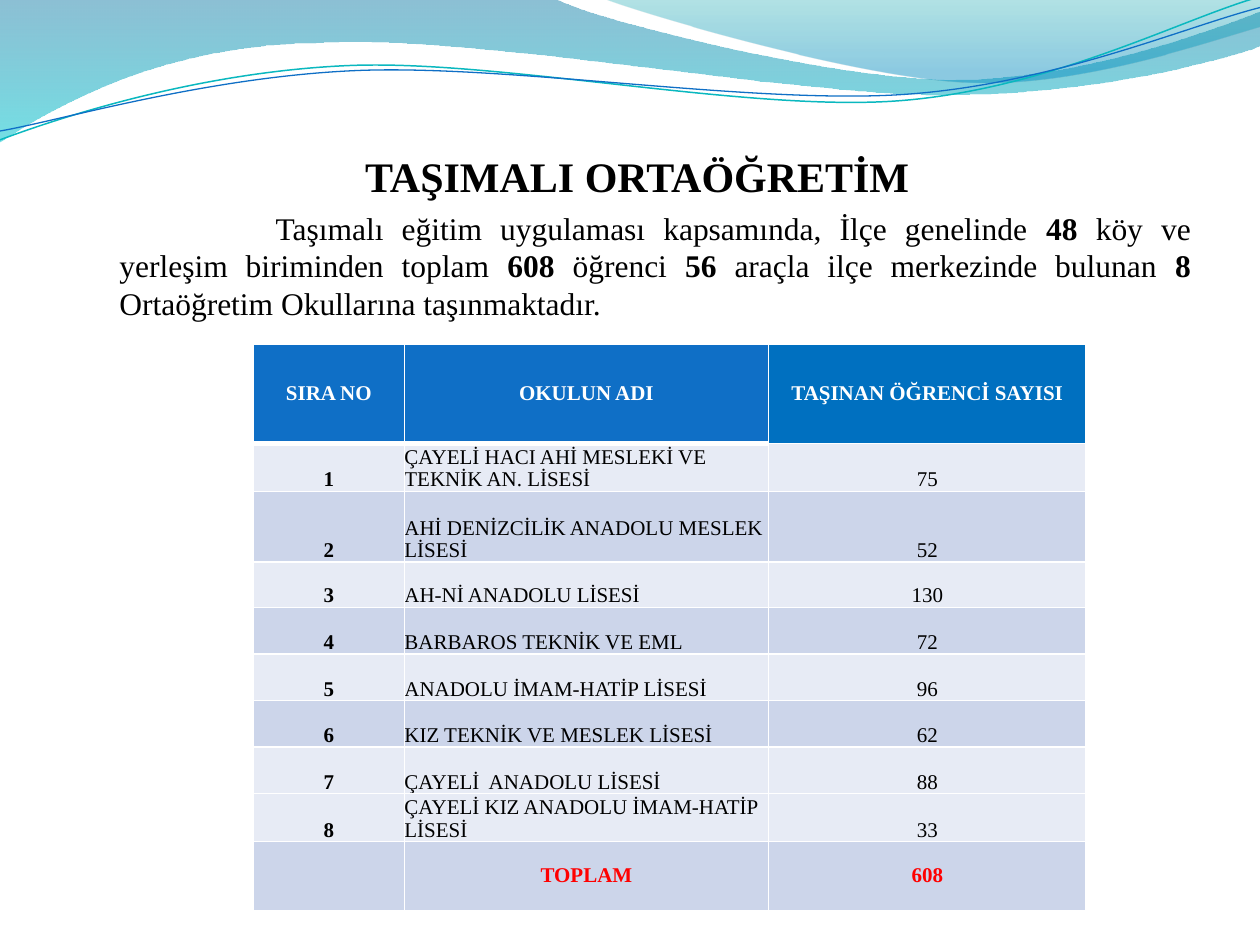
from math import cos, radians, sin

from lxml import etree
from pptx import Presentation
from pptx.dml.color import RGBColor
from pptx.enum.text import MSO_ANCHOR, PP_ALIGN
from pptx.oxml import parse_xml
from pptx.oxml.ns import nsdecls, qn
from pptx.util import Inches, Pt

FONT = "Times New Roman"


def color(hex_string):
    return RGBColor.from_string(hex_string)


def add_wave(slide, start, parts, closed):
    """Draw an outline; a part is one point (line) or three (Bezier curve)."""
    points = [start] + [point for part in parts for point in part]
    emu_points = [(Inches(x), Inches(y)) for x, y in points]
    builder = slide.shapes.build_freeform(*emu_points[0])
    builder.add_line_segments(emu_points[1:], close=closed)
    shape = builder.convert_to_shape()
    shape.shadow.inherit = False
    # Turn each group of three line points into one Bezier curve
    segments = iter(list(shape._element.iter(qn("a:lnTo"))))
    for part in parts:
        group = [next(segments) for _ in part]
        if len(group) == 3:
            curve = etree.Element(qn("a:cubicBezTo"))
            group[0].addprevious(curve)
            for segment in group:
                curve.append(segment[0])
                segment.getparent().remove(segment)
    return shape


presentation = Presentation()
presentation.slide_width = Inches(10)
presentation.slide_height = Inches(7.5)
slide = presentation.slides.add_slide(presentation.slide_layouts[6])

# Filled waves: start, outline, gradient stops (position, colour, opacity)
filled_waves = [
    ((0, -0.01),
     [[(4.4, -0.01)],
      [(4.76, 0.17), (6.64, 0.63), (7.58, 0.63)],
      [(8.53, 0.63), (9.58, 0.26), (10, 0.09)],
      [(10.01, 0.36)],
      [(9.83, 0.44), (8.7, 0.76), (7.46, 0.75)],
      [(6.22, 0.75), (3.82, 0.28), (2.57, 0.34)],
      [(1.29, 0.35), (0.46, 0.83), (-0.01, 1.13)]],
     [(0, "0074A1", 45), (100, "00C6CF", 55)]),
    ((4.79, -0.01),
     [[(5.09, 0.11), (6.82, 0.62), (7.69, 0.65)],
      [(8.56, 0.69), (9.61, 0.32), (10, 0.21)],
      [(10, 0)]],
     [(0, "00A1A9", 30), (80, "008BBF", 45)]),
]
for start, outline, stops in filled_waves:
    wave = add_wave(slide, start, outline, True)
    wave.line.fill.background()
    stop_xml = "".join(
        f'<a:gs pos="{position * 1000}"><a:srgbClr val="{hex_string}">'
        f'<a:alpha val="{opacity * 1000}"/></a:srgbClr></a:gs>'
        for position, hex_string, opacity in stops)
    gradient = parse_xml(f'<a:gradFill {nsdecls("a")} rotWithShape="1"><a:gsLst>{stop_xml}'
                         '</a:gsLst><a:lin ang="5400000" scaled="0"/></a:gradFill>')
    wave._element.spPr.find(qn("a:custGeom")).addnext(gradient)

# Thin wave lines, drawn level and then tilted about their centre
TILT = 2.7
CENTER_X, CENTER_Y = 4.99, 0.58
wave_lines = [
    ((0, 1.11),
     [[(0.48, 0.93), (1.58, 0.57), (2.77, 0.52)],
      [(3.95, 0.47), (5.93, 0.89), (7.13, 0.8)],
      [(8.33, 0.71), (9.38, 0.15), (9.98, -0.02)]], "0AB8BF", 0.85),
    ((0, 1.04),
     [[(0.47, 0.96), (1.64, 0.61), (2.83, 0.56)],
      [(4.03, 0.51), (5.97, 0.83), (7.17, 0.75)],
      [(8.36, 0.67), (9.41, 0.21), (10, 0.06)]], "0F6FC6", 0.75),
]
cosine, sine = cos(radians(TILT)), sin(radians(TILT))
for start, curves, hex_string, width in wave_lines:
    (level_start,), *level_curves = [
        [(CENTER_X + (x - CENTER_X) * cosine - (y - CENTER_Y) * sine,
          CENTER_Y + (x - CENTER_X) * sine + (y - CENTER_Y) * cosine) for x, y in part]
        for part in [[start], *curves]]
    wave = add_wave(slide, level_start, level_curves, False)
    wave.rotation = 360 - TILT
    wave.fill.background()
    wave.line.color.rgb = color(hex_string)
    wave.line.width = Pt(width)

# Heading and introduction
text_box = slide.shapes.add_textbox(Inches(0.55), Inches(1.09), Inches(9), Inches(1.57))
text_frame = text_box.text_frame
text_frame.word_wrap = True
heading = text_frame.paragraphs[0]
introduction = text_frame.add_paragraph()
introduction.space_before = Pt(3.6)
text_parts = [
    (heading, PP_ALIGN.CENTER, -0.3, [
        (" ", 28, True),
        ("TAŞIMALI ORTAÖĞRETİM ", 24, True)]),
    (introduction, PP_ALIGN.JUSTIFY, 1.24, [
        ("Taşımalı eğitim uygulaması kapsamında, İlçe genelinde ", 18, False),
        ("48", 18, True),
        (" köy ve yerleşim biriminden toplam ", 18, False),
        ("608", 18, True),
        (" öğrenci ", 18, False),
        ("56", 18, True),
        (" araçla ilçe merkezinde bulunan ", 18, False),
        ("8 ", 18, True),
        ("Ortaöğretim Okullarına taşınmaktadır.", 18, False)]),
]
for paragraph, alignment, first_indent, runs in text_parts:
    paragraph.alignment = alignment
    properties = paragraph._p.get_or_add_pPr()
    properties.set("marL", str(Inches(0.3)))
    properties.set("indent", str(Inches(first_indent)))
    for text, size, bold in runs:
        run = paragraph.add_run()
        run.text = text
        run.font.name = FONT
        run.font.size = Pt(size)
        run.font.bold = bold
        run.font.color.rgb = color("000000")

# Table of schools
LIGHT, DARK = "E7EBF5", "CCD5EA"
schools = [
    ("ÇAYELİ HACI AHİ MESLEKİ VE TEKNİK AN. LİSESİ", 75),
    ("AHİ DENİZCİLİK ANADOLU MESLEK LİSESİ", 52),
    ("AH-Nİ ANADOLU LİSESİ", 130),
    ("BARBAROS TEKNİK VE EML", 72),
    ("ANADOLU İMAM-HATİP LİSESİ", 96),
    ("KIZ TEKNİK VE MESLEK LİSESİ", 62),
    ("ÇAYELİ  ANADOLU LİSESİ", 88),
    ("ÇAYELİ KIZ ANADOLU İMAM-HATİP LİSESİ", 33),
]
rows = [("SIRA NO", "OKULUN ADI", "TAŞINAN ÖĞRENCİ SAYISI")]
rows += [(str(number), name, str(count)) for number, (name, count) in enumerate(schools, 1)]
rows.append(("", "TOPLAM", str(sum(count for _, count in schools))))
column_widths = [1.2, 2.89, 2.52]
row_heights = [0.79, 0.38, 0.56, 0.36, 0.37, 0.37, 0.37, 0.37, 0.38, 0.55]
last_row = len(rows) - 1

table = slide.shapes.add_table(len(rows), 3, Inches(2.01), Inches(2.73),
                               Inches(sum(column_widths)), Inches(sum(row_heights))).table
for column, width in zip(table.columns, column_widths):
    column.width = Inches(width)
for row, height in zip(table.rows, row_heights):
    row.height = Inches(height)

for row_index, texts in enumerate(rows):
    is_header, is_total = row_index == 0, row_index == last_row
    band = DARK if row_index in (2, 4, 6, last_row) else LIGHT
    for column_index, text in enumerate(texts):
        cell = table.cell(row_index, column_index)
        cell.margin_left = cell.margin_right = cell.margin_top = cell.margin_bottom = 0
        cell.vertical_anchor = MSO_ANCHOR.MIDDLE if is_header or is_total else MSO_ANCHOR.BOTTOM

        # Borders come before the fill in the cell properties
        thick_side = {0: "B", 1: "T"}.get(row_index) if column_index < 2 else None
        for side in "LRTB":
            width = Pt(3 if side == thick_side else 1)
            border = etree.SubElement(cell._tc.get_or_add_tcPr(), qn(f"a:ln{side}"), w=str(width))
            border_fill = etree.SubElement(border, qn("a:solidFill"))
            etree.SubElement(border_fill, qn("a:srgbClr"), val="FFFFFF")
        header_fill = "0070C0" if column_index == 2 else "0F6FC6"
        cell.fill.solid()
        cell.fill.fore_color.rgb = color(header_fill if is_header else band)

        cell.text_frame.text = text
        paragraph = cell.text_frame.paragraphs[0]
        is_name = column_index == 1 and not (is_header or is_total)
        paragraph.alignment = PP_ALIGN.LEFT if is_name else PP_ALIGN.CENTER
        paragraph.line_spacing = 0.95
        paragraph.font.size = Pt(12)
        for run in paragraph.runs:
            run.font.name = FONT
            run.font.size = Pt(12)
            run.font.bold = is_header or is_total or column_index == 0
            run.font.color.rgb = color("FFFFFF" if is_header else "FF0000" if is_total else "000000")

presentation.save("out.pptx")
